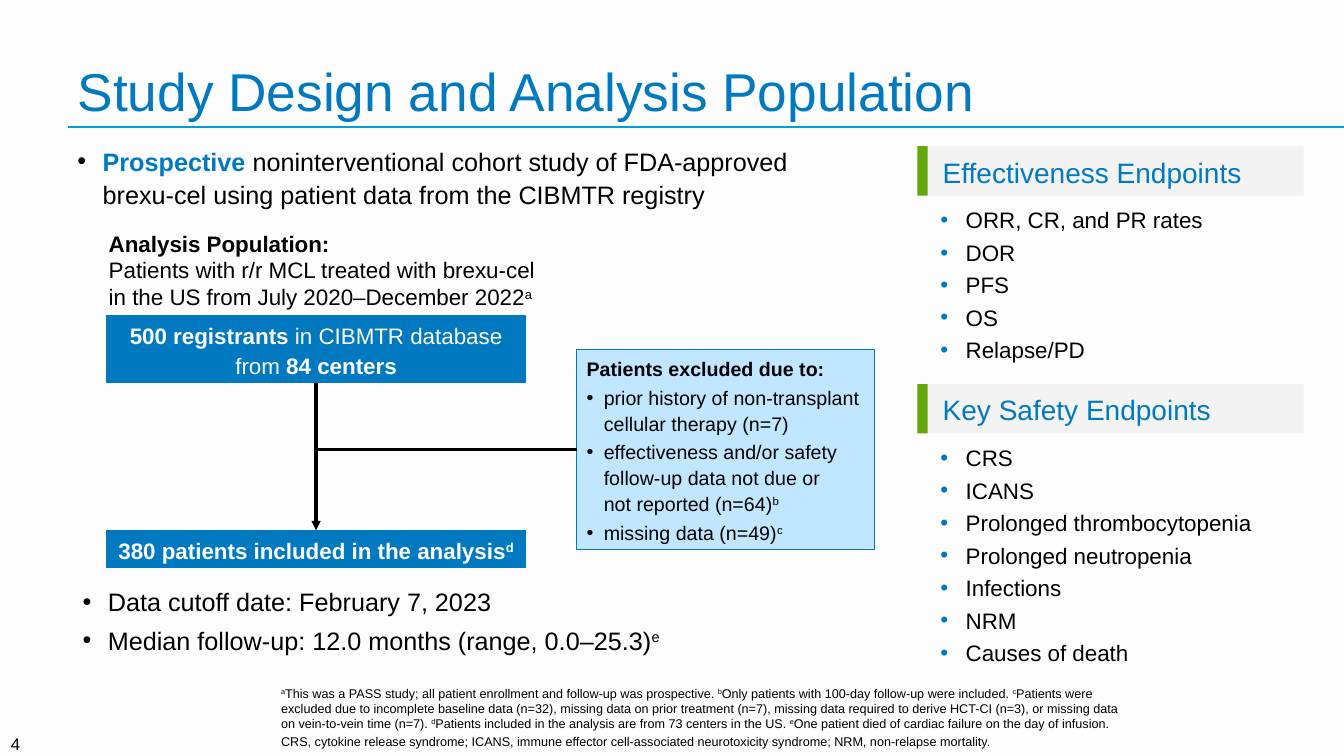
import pptx
import pptx.dml.color
import pptx.enum.shapes
import pptx.enum.text
import pptx.oxml.ns
import pptx.util
from lxml import etree

Inches = pptx.util.Inches
Pt = pptx.util.Pt
qn = pptx.oxml.ns.qn
ALIGN = pptx.enum.text.PP_ALIGN
ANCHOR = pptx.enum.text.MSO_ANCHOR
RECT = pptx.enum.shapes.MSO_SHAPE.RECTANGLE
STRAIGHT = pptx.enum.shapes.MSO_CONNECTOR.STRAIGHT

COLORS = {
    "page": "FDFDFD", "blue": "0079C1", "rule": "00A0DD", "pale_blue": "C0E7FF",
    "gray": "F3F3F4", "green": "63A70A", "black": "000000",
}
DEFAULT_INSETS = (0.1, 0.05, 0.1, 0.05)
WIDE_INSETS = (0.25, 0.12, 0.2, 0.1)


def rgb(name):
    return pptx.dml.color.RGBColor.from_string(COLORS[name])


def add_bullet(paragraph, indent, color):
    properties = paragraph._p.get_or_add_pPr()
    properties.set("marL", str(Inches(indent)))
    properties.set("indent", str(-Inches(indent)))
    bullet_color = etree.SubElement(properties, qn("a:buClr"))
    etree.SubElement(bullet_color, qn("a:srgbClr"), val=COLORS[color])
    etree.SubElement(properties, qn("a:buFont"), typeface="Arial")
    etree.SubElement(properties, qn("a:buChar"), char="•")


def add_runs(paragraph, parts):
    """Each part is plain text or (text, style): bold, key or sup."""
    for part in parts:
        text, style = (part, "") if isinstance(part, str) else part
        for number, line in enumerate(text.split("\n")):
            if number:
                paragraph.add_line_break()
            run = paragraph.add_run()
            run.text = line
            if style in ("bold", "key"):
                run.font.bold = True
            if style == "key":
                run.font.color.rgb = rgb("blue")
            if style == "sup":
                run._r.get_or_add_rPr().set("baseline", "30000")


def write(shape, paragraphs, size, color="black", bold=None, bullet=None, indent=0.25,
          align=ALIGN.LEFT, spacing=None, after=0, anchor=ANCHOR.TOP, insets=DEFAULT_INSETS,
          plain_first=False):
    """Fill a shape; every paragraph is a list of parts."""
    frame = shape.text_frame
    frame.word_wrap = True
    frame.auto_size = pptx.enum.text.MSO_AUTO_SIZE.NONE
    frame.vertical_anchor = anchor
    (frame.margin_left, frame.margin_top,
     frame.margin_right, frame.margin_bottom) = map(Inches, insets)
    for number, parts in enumerate(paragraphs):
        paragraph = frame.add_paragraph() if number else frame.paragraphs[0]
        paragraph.alignment = align
        paragraph.space_after = Pt(after)
        if spacing:
            paragraph.line_spacing = spacing
        if bullet and (number or not plain_first):
            add_bullet(paragraph, indent, bullet)
        paragraph.font.name = "Arial"
        paragraph.font.size = Pt(size)
        paragraph.font.bold = bold
        paragraph.font.color.rgb = rgb(color)
        add_runs(paragraph, parts)


def add_text(slide, box, paragraphs, size, **style):
    write(slide.shapes.add_textbox(*map(Inches, box)), paragraphs, size, **style)


def add_box(slide, box, fill, line=None):
    shape = slide.shapes.add_shape(RECT, *map(Inches, box))
    shape.shadow.inherit = False
    shape.fill.solid()
    shape.fill.fore_color.rgb = rgb(fill)
    if line:
        shape.line.color.rgb = rgb(line)
        shape.line.width = Pt(0.75)
    else:
        shape.line.fill.background()
    return shape


def add_line(slide, start, end, color, width):
    line = slide.shapes.add_connector(STRAIGHT, *map(Inches, start + end))
    line.line.color.rgb = rgb(color)
    line.line.width = Pt(width)
    etree.SubElement(line._element.spPr, qn("a:effectLst"))
    return line


def add_header(slide, left, top, width, height):
    bottom = top + height
    add_line(slide, (left, bottom), (left + width, bottom), "rule", 0.75)
    title = slide.shapes.title
    title.left, title.top, title.width, title.height = map(Inches, (left, top, 12, height))
    write(title, [["Study Design and Analysis Population"]], 38, color="blue",
          anchor=ANCHOR.BOTTOM)


def add_flow(slide, left, top):
    """Patient flow from registrants to analysis, with exclusions at the side."""
    width = 4.15
    middle = left + width / 2
    node = {"color": "page", "align": ALIGN.CENTER, "spacing": 1.1, "anchor": ANCHOR.MIDDLE}

    add_text(slide, (left - 0.08, top - 0.9, 6.15, 0.91), [
        [("Analysis Population:", "bold")],
        ["Patients with r/r MCL treated with brexu-cel\n"
         "in the US from July 2020–December 2022", ("a", "sup")],
    ], 16)

    registrants = add_box(slide, (left, top, width, 0.67), "blue", "blue")
    write(registrants, [[("500 registrants ", "bold"), "in CIBMTR database from",
                         (" 84 centers", "bold")]], 16, **node)
    included = add_box(slide, (left, top + 2.13, width, 0.37), "blue", "blue")
    write(included, [["380 patients included in the analysis", ("d", "sup")]], 16,
          bold=True, **node)

    excluded_left, excluded_top, excluded_height = left + 4.66, top + 0.34, 1.98
    excluded = add_box(slide, (excluded_left, excluded_top, 2.95, excluded_height),
                       "pale_blue", "blue")
    write(excluded, [
        [("Patients excluded due to:", "bold")],
        ["prior history of non-transplant\ncellular therapy (n=7)"],
        ["effectiveness and/or safety\nfollow-up data not due or\nnot reported (n=64)",
         ("b", "sup")],
        ["missing data (n=49)", ("c", "sup")],
    ], 14, bullet="black", indent=0.17, spacing=1.1, after=2, plain_first=True)

    arrow = add_line(slide, (middle, top + 0.67), (middle, top + 2.13), "black", 2.25)
    arrow.begin_connect(registrants, 2)
    arrow.end_connect(included, 0)
    etree.SubElement(arrow.line._get_or_add_ln(), qn("a:tailEnd"), type="triangle")

    branch_y = excluded_top + excluded_height / 2
    branch = add_line(slide, (middle, branch_y), (excluded_left, branch_y), "black", 2.25)
    branch.end_connect(excluded, 1)


def add_endpoints(slide, left, top, heading, endpoints):
    """Heading bar with a green edge above a bulleted list."""
    bar = add_box(slide, (left, top, 3.83, 0.49), "gray")
    write(bar, [[heading]], 20, color="blue", anchor=ANCHOR.MIDDLE, insets=WIDE_INSETS)
    add_box(slide, (left, top, 0.1, 0.49), "green")
    add_text(slide, (left + 0.13, top + 0.55, 3.6, 0.07 + 0.32 * len(endpoints)),
             [[endpoint] for endpoint in endpoints], 16, bullet="blue", after=4)


def add_footer(slide, left, top):
    add_text(slide, (left, top, 8.6, 0.73), [
        [("a", "sup"), "This was a PASS study; all patient enrollment and follow-up was "
         "prospective. ", ("b", "sup"), "Only patients with 100-day follow-up were included. ",
         ("c", "sup"), "Patients were excluded due to incomplete baseline data (n=32), missing "
         "data on prior treatment (n=7), missing data required to derive HCT-CI (n=3), or "
         "missing data on vein-to-vein time (n=7). ",
         ("d", "sup"), "Patients included in the analysis are from 73 centers in the US. ",
         ("e", "sup"), "One patient died of cardiac failure on the day of infusion."],
        ["CRS, cytokine release syndrome; ICANS, immune effector cell-associated neurotoxicity "
         "syndrome; NRM, non-relapse mortality."],
    ], 9, after=2, anchor=ANCHOR.BOTTOM)
    add_text(slide, (0, 7.26, 0.3, 0.24), [["4"]], 12, align=ALIGN.RIGHT,
             anchor=ANCHOR.MIDDLE, insets=(0, 0, 0.1, 0))


def main():
    deck = pptx.Presentation()
    deck.slide_width, deck.slide_height = Inches(13.33), Inches(7.5)
    slide = deck.slides.add_slide(deck.slide_layouts[5])
    slide.background.fill.solid()
    slide.background.fill.fore_color.rgb = rgb("page")

    add_header(slide, 0.67, 0.01, 12.66, 1.25)

    # Study description, patient flow and follow-up
    add_text(slide, (0.67, 1.37, 8, 0.8), [
        [("Prospective ", "key"), "noninterventional cohort study of FDA-approved\n"
         "brexu-cel using patient data from the CIBMTR registry"],
    ], 18, bullet="black", spacing=1.1)
    add_flow(slide, 1.06, 3.13)
    add_text(slide, (0.57, 5.75, 6.26, 0.8), [
        ["Data cutoff date: February 7, 2023"],
        ["Median follow-up: 12.0 months (range, 0.0–25.3)", ("e", "sup")],
    ], 18, bullet="black", after=6, anchor=ANCHOR.MIDDLE, insets=WIDE_INSETS)

    # Endpoint panels
    add_endpoints(slide, 9.1, 1.45, "Effectiveness Endpoints",
                  ["ORR, CR, and PR rates", "DOR", "PFS", "OS", "Relapse/PD"])
    add_endpoints(slide, 9.1, 3.81, "Key Safety Endpoints",
                  ["CRS", "ICANS", "Prolonged thrombocytopenia", "Prolonged neutropenia",
                   "Infections", "NRM", "Causes of death"])

    add_footer(slide, 2.69, 6.75)
    deck.save("out.pptx")


if __name__ == "__main__":
    main()
